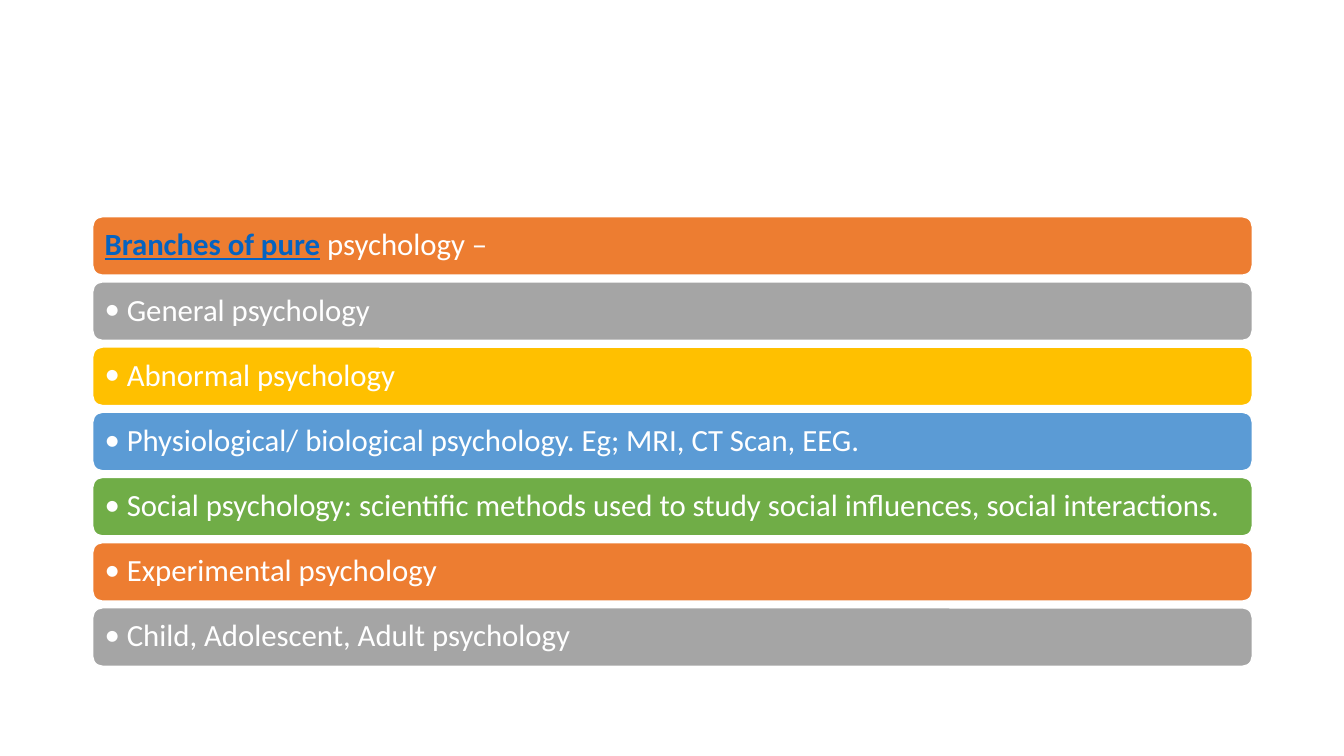
from dataclasses import dataclass

from lxml import etree
from pptx import Presentation
from pptx.dml.color import RGBColor
from pptx.enum.shapes import MSO_SHAPE
from pptx.enum.text import MSO_ANCHOR, PP_ALIGN
from pptx.oxml.ns import qn
from pptx.slide import Slide
from pptx.text.text import _Paragraph
from pptx.util import Inches, Pt

ROUNDED = MSO_SHAPE.ROUNDED_RECTANGLE
MIDDLE = MSO_ANCHOR.MIDDLE
LEFT = PP_ALIGN.LEFT

SLIDE_WIDTH, SLIDE_HEIGHT = 13.33, 7.5
BAR_LEFT, BAR_WIDTH, BAR_HEIGHT = 0.92, 11.5, 0.58
FIRST_TOP, LAST_TOP = 2.15, 6.03
INSET = 0.09
BULLET_INDENT = 0.22

WHITE, LINK_BLUE = "FFFFFF", "0563C1"
ORANGE, GREY, GOLD, BLUE, GREEN = "ED7D31", "A5A5A5", "FFC000", "5B9BD5", "70AD47"


@dataclass(frozen=True)
class Phrase:
    text: str
    color: str = WHITE
    bold: bool = False
    underline: bool = False


@dataclass(frozen=True)
class Bar:
    fill: str
    phrases: tuple[Phrase, ...]
    bulleted: bool = True


BARS = (
    Bar(ORANGE, (Phrase("Branches of pure", LINK_BLUE, True, True),
                 Phrase(" ", bold=True),
                 Phrase("psychology –")), bulleted=False),
    Bar(GREY, (Phrase("General psychology"),)),
    Bar(GOLD, (Phrase("Abnormal psychology"),)),
    Bar(BLUE, (Phrase("Physiological/ biological psychology. Eg; MRI, CT Scan, EEG."),)),
    Bar(GREEN, (Phrase("Social psychology: scientific methods used to study "
                       "social influences, social interactions."),)),
    Bar(ORANGE, (Phrase("Experimental psychology"),)),
    Bar(GREY, (Phrase("Child, Adolescent, Adult psychology"),)),
)


def rgb(color: str) -> RGBColor:
    return RGBColor.from_string(color)


def add_bullet(paragraph: _Paragraph) -> None:
    properties = paragraph._p.get_or_add_pPr()
    properties.set("marL", str(Inches(BULLET_INDENT)))
    properties.set("indent", str(-Inches(BULLET_INDENT)))
    etree.SubElement(properties, qn("a:buFont")).set("typeface", "Calibri")
    etree.SubElement(properties, qn("a:buChar")).set("char", "•")


def add_phrase(paragraph: _Paragraph, phrase: Phrase) -> None:
    run = paragraph.add_run()
    run.text = phrase.text
    run.font.name = "Calibri"
    run.font.size = Pt(22)
    run.font.bold = phrase.bold
    run.font.underline = phrase.underline
    run.font.color.rgb = rgb(phrase.color)


def add_bar(slide: Slide, bar: Bar, top: float) -> None:
    shape = slide.shapes.add_shape(ROUNDED, Inches(BAR_LEFT), Inches(top),
                                   Inches(BAR_WIDTH), Inches(BAR_HEIGHT))
    shape.shadow.inherit = False
    shape.fill.solid()
    shape.fill.fore_color.rgb = rgb(bar.fill)
    shape.line.color.rgb = rgb(WHITE)
    shape.line.width = Pt(1)

    frame = shape.text_frame
    frame.word_wrap = True
    frame.vertical_anchor = MIDDLE
    frame.margin_left = frame.margin_right = Inches(INSET)
    frame.margin_top = frame.margin_bottom = Inches(INSET)
    paragraph = frame.paragraphs[0]
    paragraph.alignment = LEFT
    paragraph.line_spacing = 0.9
    if bar.bulleted:
        add_bullet(paragraph)
    for phrase in bar.phrases:
        add_phrase(paragraph, phrase)


def main() -> None:
    presentation = Presentation()
    presentation.slide_width = Inches(SLIDE_WIDTH)
    presentation.slide_height = Inches(SLIDE_HEIGHT)
    slide = presentation.slides.add_slide(presentation.slide_layouts[6])
    pitch = (LAST_TOP - FIRST_TOP) / (len(BARS) - 1)
    for row, bar in enumerate(BARS):
        add_bar(slide, bar, FIRST_TOP + row * pitch)
    presentation.save("out.pptx")


if __name__ == "__main__":
    main()
